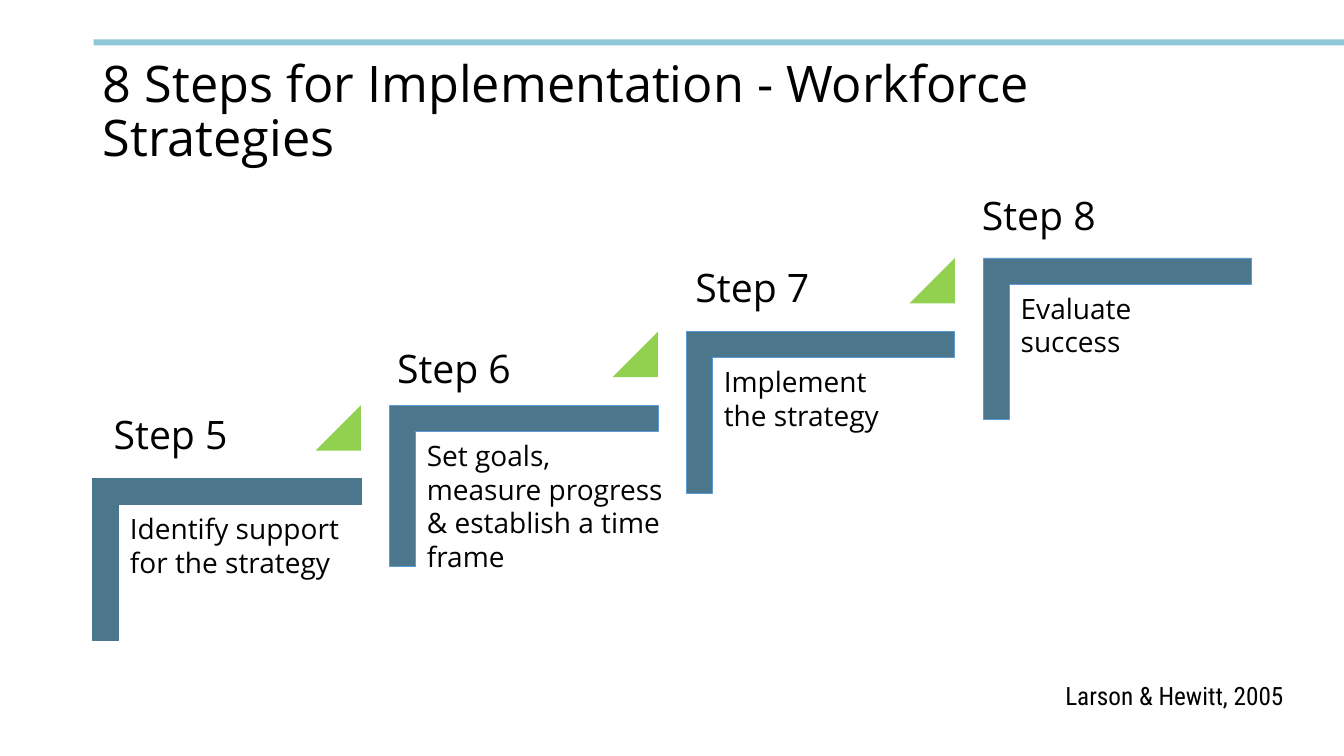
"""Build the staircase slide for steps 5 to 8 of workforce strategies."""
from dataclasses import dataclass

from pptx import Presentation
from pptx.dml.color import RGBColor
from pptx.enum.shapes import MSO_SHAPE
from pptx.enum.text import MSO_ANCHOR, MSO_AUTO_SIZE, PP_ALIGN
from pptx.shapes.autoshape import Shape
from pptx.shapes.shapetree import GroupShapes, SlideShapes
from pptx.slide import Slide
from pptx.text.text import TextFrame
from pptx.util import Inches, Pt

BLACK = RGBColor(0x00, 0x00, 0x00)
RULE_BLUE = RGBColor(0x8E, 0xC7, 0xD7)
STAIR_BLUE = RGBColor(0x4C, 0x76, 0x8C)
EDGE_BLUE = RGBColor(0x5B, 0x9B, 0xD5)
RISE_GREEN = RGBColor(0x92, 0xD0, 0x50)

FIRST_LEFT, FIRST_TOP = 1.45, 4.22
STEP_RUN, STEP_RISE = 2.945, 0.73
STAIR_WIDTH, STAIR_HEIGHT, STAIR_THICKNESS = 1.6, 2.66, 0.161


@dataclass(frozen=True)
class Step:
    label: str
    label_left: float
    label_top: float
    lines: tuple[str, ...]
    body_width: float
    body_height: float = 0.77
    edge: RGBColor = EDGE_BLUE
    rises: bool = True


STEPS = (
    Step("Step 5", 1.03, 4.02, ("Identify support for the strategy",), 2.29, edge=STAIR_BLUE),
    Step("Step 6", 3.84, 3.37, ("Set goals, ", "measure progress & establish a time frame"), 2.67, 1.45),
    Step("Step 7", 6.8, 2.56, ("Implement ", "the strategy"), 2.38),
    Step("Step 8", 9.64, 1.85, ("Evaluate success",), 2.26, rises=False),
)


def write(frame: TextFrame, *lines: str, size: float, font: str = "Open Sans",
          align: PP_ALIGN = PP_ALIGN.LEFT) -> None:
    frame.word_wrap = True
    paragraph = frame.paragraphs[0]
    paragraph.alignment = align
    for index, line in enumerate(lines):
        if index:
            paragraph.add_line_break()
        run = paragraph.add_run()
        run.text = line
        run.font.size = Pt(size)
        run.font.name = font
        run.font.color.rgb = BLACK


def add_text(shapes: SlideShapes | GroupShapes, left: float, top: float, width: float,
             height: float, *lines: str, **text_format) -> None:
    frame = shapes.add_textbox(Inches(left), Inches(top), Inches(width), Inches(height)).text_frame
    frame.auto_size = MSO_AUTO_SIZE.SHAPE_TO_FIT_TEXT
    write(frame, *lines, **text_format)


def add_filled(shapes: SlideShapes | GroupShapes, kind: MSO_SHAPE, left: float, top: float,
               width: float, height: float, fill: RGBColor) -> Shape:
    filled = shapes.add_shape(kind, Inches(left), Inches(top), Inches(width), Inches(height))
    filled.shadow.inherit = False
    filled.fill.solid()
    filled.fill.fore_color.rgb = fill
    filled.line.fill.background()
    return filled


def add_step(slide: Slide, position: int, step: Step) -> None:
    shapes = slide.shapes.add_group_shape().shapes
    left = FIRST_LEFT + position * STEP_RUN
    top = FIRST_TOP - position * STEP_RISE
    stair = add_filled(shapes, MSO_SHAPE.CORNER, left, top, STAIR_WIDTH, STAIR_HEIGHT, STAIR_BLUE)
    stair.rotation = 90
    stair.adjustments[0] = stair.adjustments[1] = STAIR_THICKNESS
    stair.line.color.rgb = step.edge
    stair.line.width = Pt(0.5)
    if step.rises:
        riser = add_filled(shapes, MSO_SHAPE.ISOSCELES_TRIANGLE, left + 1.68, top - 0.2, 0.45, 0.45, RISE_GREEN)
        riser.adjustments[0] = 1
    add_text(shapes, step.label_left, step.label_top, 2.1, 0.57, step.label, size=28)
    add_text(shapes, left - 0.26, top + 0.81, step.body_width, step.body_height, *step.lines, size=20)


def add_title(slide: Slide, wording: str) -> None:
    title = slide.shapes.title
    title.left, title.top = Inches(0.92), Inches(0.4)
    title.width, title.height = Inches(11.5), Inches(1.45)
    title.text_frame.vertical_anchor = MSO_ANCHOR.MIDDLE
    write(title.text_frame, wording, size=36)
    title.text_frame.paragraphs[0].line_spacing = 0.9


def main() -> None:
    deck = Presentation()
    deck.slide_width, deck.slide_height = Inches(13.33), Inches(7.5)
    slide = deck.slides.add_slide(deck.slide_layouts[5])
    add_filled(slide.shapes, MSO_SHAPE.RECTANGLE, 0.93, 0.39, 12.4, 0.06, RULE_BLUE)
    add_title(slide, "8 Steps for Implementation - Workforce Strategies")
    add_text(slide.shapes, 10.04, 6.7, 2.79, 0.4, "Larson & Hewitt, 2005",
             size=18, font="Roboto Condensed", align=PP_ALIGN.RIGHT)
    for position, step in enumerate(STEPS):
        add_step(slide, position, step)
    deck.save("out.pptx")


if __name__ == "__main__":
    main()
